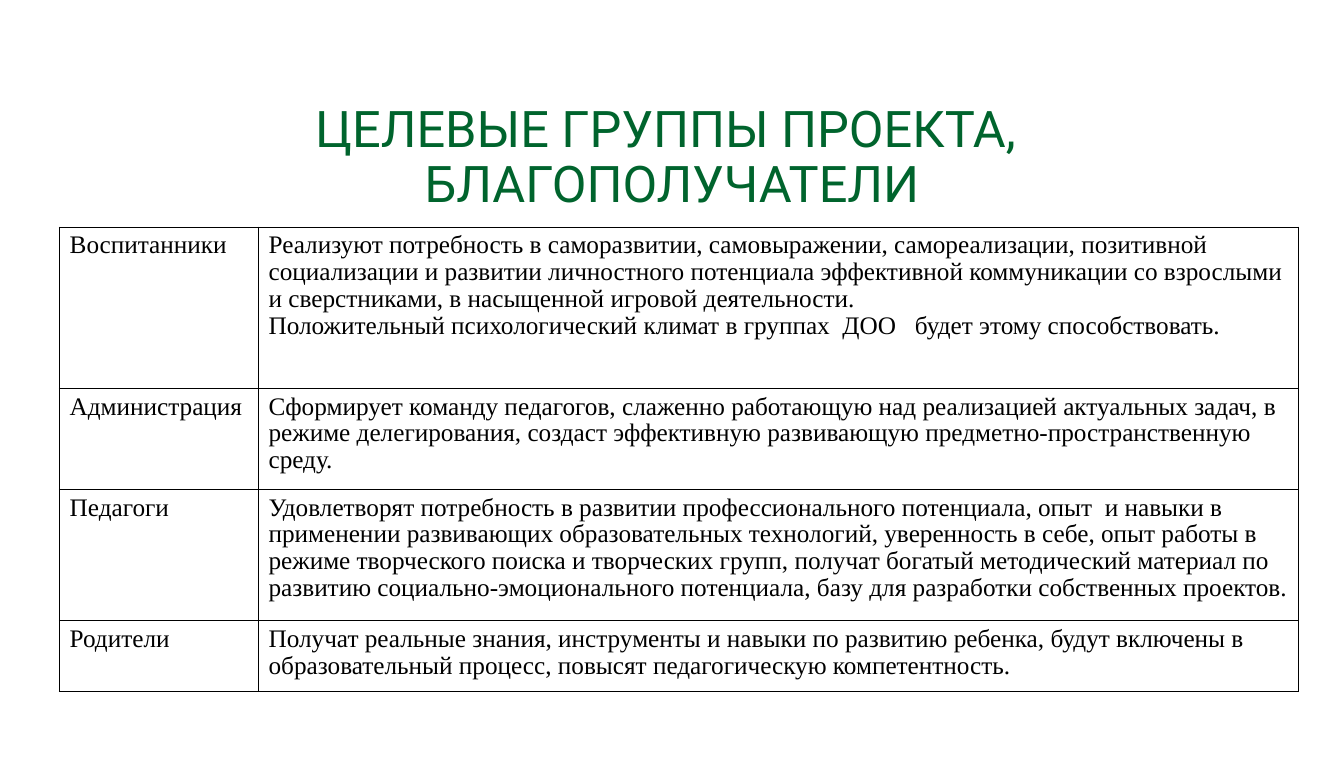
from pptx import Presentation
from pptx.dml.color import RGBColor
from pptx.enum.text import MSO_ANCHOR, MSO_AUTO_SIZE, PP_ALIGN
from pptx.oxml import parse_xml
from pptx.oxml.ns import nsdecls
from pptx.util import Inches, Pt

COLORS = {"title": "00642D", "text": "000000", "line": "000000"}
TITLE = ["ЦЕЛЕВЫЕ ГРУППЫ ПРОЕКТА, ", "БЛАГОПОЛУЧАТЕЛИ"]
GROUPS = [
    ("Воспитанники", 1.6, [
        "Реализуют потребность в саморазвитии, самовыражении, самореализации, позитивной социализации и развитии личностного потенциала эффективной коммуникации со взрослыми и сверстниками, в насыщенной игровой деятельности.",
        "Положительный психологический климат в группах  ДОО   будет этому способствовать."]),
    ("Администрация", 1.0, [
        "Сформирует команду педагогов, слаженно работающую над реализацией актуальных задач, в режиме делегирования, создаст эффективную развивающую предметно-пространственную среду."]),
    ("Педагоги", 1.3, [
        "Удовлетворят потребность в развитии профессионального потенциала, опыт  и навыки в применении развивающих образовательных технологий, уверенность в себе, опыт работы в режиме творческого поиска и творческих групп, получат богатый методический материал по развитию социально-эмоционального потенциала, базу для разработки собственных проектов."]),
    ("Родители", 0.7, [
        "Получат реальные знания, инструменты и навыки по развитию ребенка, будут включены в образовательный процесс, повысят педагогическую компетентность."]),
]
WIDTHS = [1.97, 10.3]
WIDE, HIGH = 13.31, 7.5


def write(frame, lines, face, size, color, space, align):
    frame.text = "\n".join(lines)
    for para in frame.paragraphs:
        para.alignment = align
        para.line_spacing = space
        para.space_before = Pt(0)
        font = para.font
        font.name, font.size = face, Pt(size)
        font.color.rgb = RGBColor.from_string(COLORS[color])


def border(cell):
    props = cell._tc.get_or_add_tcPr()
    for at, side in enumerate(("lnL", "lnR", "lnT", "lnB")):
        props.insert(at, parse_xml(
            f'<a:{side} {nsdecls("a")} w="{Pt(1)}"><a:solidFill>'
            f'<a:srgbClr val="{COLORS["line"]}"/></a:solidFill></a:{side}>'))


def main():
    deck = Presentation()
    deck.slide_width, deck.slide_height = Inches(WIDE), Inches(HIGH)
    slide = deck.slides.add_slide(deck.slide_layouts[5])

    title = slide.shapes.title
    title.left, title.top = 0, Inches(1.03)
    title.width, title.height = deck.slide_width, Inches(1.09)
    frame = title.text_frame
    frame.margin_left = frame.margin_right = 0
    frame.margin_top = frame.margin_bottom = 0
    frame.vertical_anchor = MSO_ANCHOR.TOP
    frame.auto_size = MSO_AUTO_SIZE.NONE
    write(frame, TITLE, "Roboto", 36, "title", 0.9, PP_ALIGN.CENTER)

    total = sum(height for _, height, _ in GROUPS)
    table = slide.shapes.add_table(
        len(GROUPS), len(WIDTHS), Inches(0.59), Inches(2.25),
        Inches(sum(WIDTHS)), Inches(total)).table
    table.first_row = table.horz_banding = False
    for col, width in zip(table.columns, WIDTHS):
        col.width = Inches(width)
    for row, (name, height, gains) in zip(table.rows, GROUPS):
        row.height = Inches(height)
        for cell, lines in zip(row.cells, ([name], gains)):
            cell.fill.background()
            border(cell)
            write(cell.text_frame, lines, "Times New Roman", 18, "text",
                  0.96, PP_ALIGN.LEFT)

    deck.save("out.pptx")


if __name__ == "__main__":
    main()
